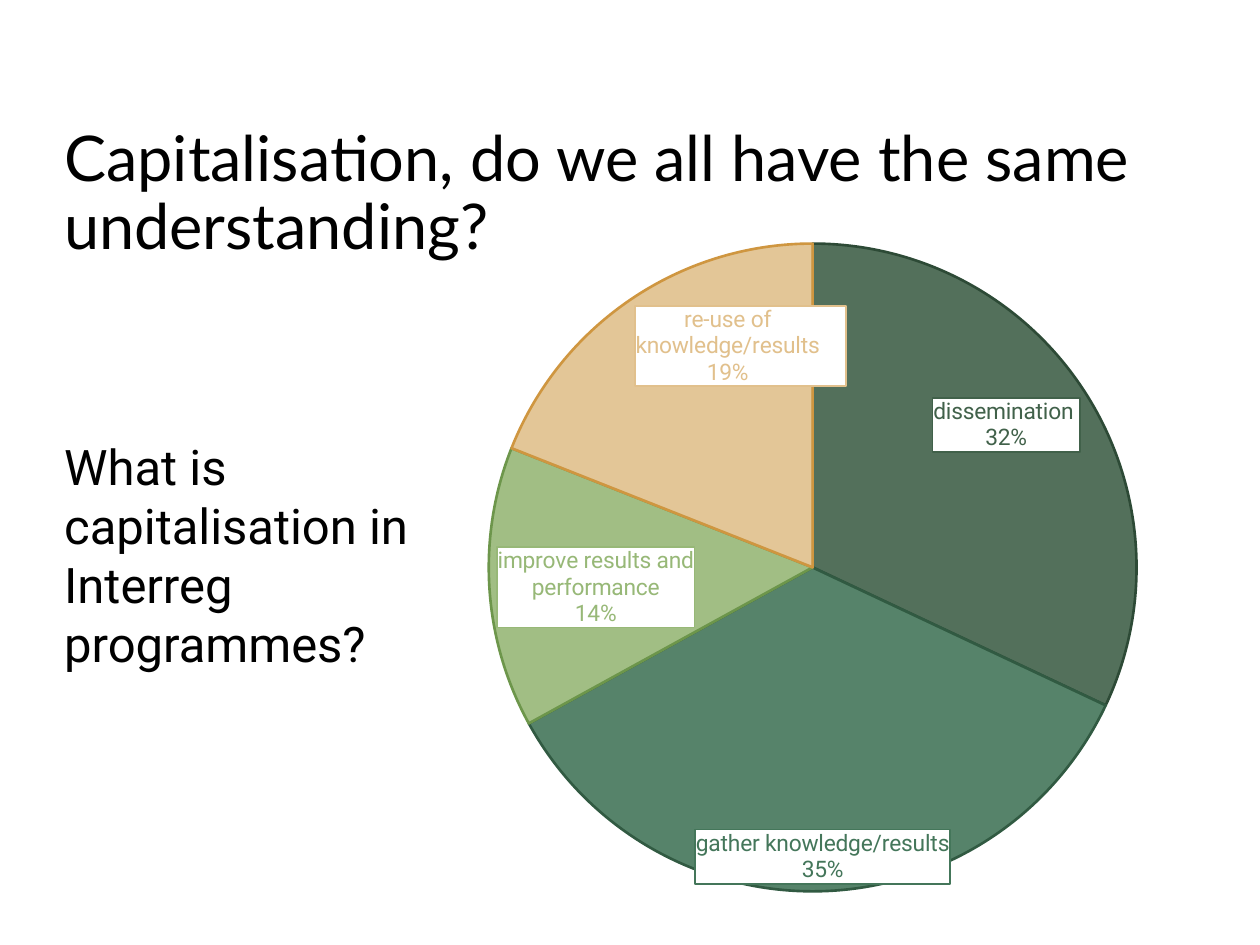
from lxml import etree
from pptx import Presentation
from pptx.chart.data import CategoryChartData
from pptx.dml.color import RGBColor
from pptx.enum.chart import XL_CHART_TYPE, XL_LABEL_POSITION
from pptx.enum.text import MSO_ANCHOR
from pptx.oxml import parse_xml
from pptx.oxml.ns import nsdecls, qn
from pptx.util import Pt

PIE = XL_CHART_TYPE.PIE
INSIDE_END = XL_LABEL_POSITION.INSIDE_END
TOP, MIDDLE = MSO_ANCHOR.TOP, MSO_ANCHOR.MIDDLE

HEADING = "Capitalisation, do we all have the same understanding?"
QUESTION = "What is capitalisation in Interreg programmes?"
ANSWERS = [
    ("dissemination ", 32, "41614A", "2D4A36"),
    ("gather knowledge/results", 35, "44765A", "315A42"),
    ("improve results and performance", 14, "97B877", "6D964B"),
    ("re-use of knowledge/results", 19, "E1C08C", "CF9640"),
]

THEME = {
    "text": "000000", "label_fill": "FFFFFF", "slice_opacity": 90,
    "heading_font": "Lato", "body_font": "Roboto",
    "heading_size": 36, "question_size": 28, "chart_size": 10, "label_size": 13,
    "slice_line": 1.5, "label_line": 1,
}
SLIDE_SIZE = (720, 540)
HEADING_AREA = (36.72, 72.72, 646.56, 116.64)
QUESTION_AREA = (36.72, 240.48, 213.84, 152.64)
CHART_AREA = (162, 119.52, 623.52, 393.84)
PLOT_AREA = {"x": 0, "y": 0.05, "w": 0.97, "h": 0.94}


def add_text(slide, text, *, area, font, size, anchor=TOP, spacing=1.0):
    box = slide.shapes.add_textbox(*map(Pt, area))
    frame = box.text_frame
    frame.word_wrap = True
    frame.vertical_anchor = anchor
    frame.margin_left = frame.margin_right = frame.margin_top = frame.margin_bottom = 0
    para = frame.paragraphs[0]
    para.line_spacing = spacing
    span = para.add_run()
    span.text = text
    set_font(span.font, font, size, THEME["text"])


def set_font(target, name, size, color):
    target.name = name
    target.size = Pt(size)
    target.color.rgb = RGBColor.from_string(color)


def set_plot_layout(chart):
    places = "".join(f'<c:{key} val="{value}"/>' for key, value in PLOT_AREA.items())
    layout = parse_xml(
        f'<c:layout {nsdecls("c")}><c:manualLayout><c:layoutTarget val="inner"/>'
        f'<c:xMode val="edge"/><c:yMode val="edge"/>{places}</c:manualLayout></c:layout>'
    )
    plot_area = chart.element.find(".//" + qn("c:plotArea"))
    old_layout = plot_area.find(qn("c:layout"))
    if old_layout is not None:
        plot_area.remove(old_layout)
    plot_area.insert(0, layout)


def style_slice(point, fill, line):
    point.format.fill.solid()
    point.format.fill.fore_color.rgb = RGBColor.from_string(fill)
    point.format.line.color.rgb = RGBColor.from_string(line)
    point.format.line.width = Pt(THEME["slice_line"])
    set_font(point.data_label.font, THEME["body_font"], THEME["label_size"], fill)
    point.data_label.position = INSIDE_END


def style_label(label, color):
    frame = parse_xml(
        f'<c:spPr {nsdecls("c", "a")}>'
        f'<a:solidFill><a:srgbClr val="{THEME["label_fill"]}"/></a:solidFill>'
        f'<a:ln w="{Pt(THEME["label_line"])}"><a:solidFill><a:srgbClr val="{color}"/>'
        f'</a:solidFill></a:ln></c:spPr>'
    )
    label.find(qn("c:txPr")).addprevious(frame)
    for name, shown in (("showVal", "0"), ("showCatName", "1"), ("showPercent", "1")):
        label.find(qn("c:" + name)).set("val", shown)
    separator = etree.Element(qn("c:separator"))
    separator.text = "\n"
    label.find(qn("c:showBubbleSize")).addnext(separator)


def add_pie(slide):
    names, values, fills, lines = zip(*ANSWERS)
    data = CategoryChartData()
    data.categories = names
    data.add_series("Series 1", values)
    chart = slide.shapes.add_chart(PIE, *map(Pt, CHART_AREA), data).chart
    chart.has_title = False
    chart.has_legend = False
    set_font(chart.font, THEME["body_font"], THEME["chart_size"], THEME["text"])
    set_plot_layout(chart)

    plot = chart.plots[0]
    plot.vary_by_categories = True
    for index, (fill, line) in enumerate(zip(fills, lines)):
        style_slice(plot.series[0].points[index], fill, line)
    for label, fill in zip(chart.element.iter(qn("c:dLbl")), fills):
        style_label(label, fill)
    for slice_part in chart.element.iter(qn("c:dPt")):
        color = slice_part.find(f'{qn("c:spPr")}/{qn("a:solidFill")}/{qn("a:srgbClr")}')
        alpha = etree.SubElement(color, qn("a:alpha"))
        alpha.set("val", str(THEME["slice_opacity"] * 1000))


def main():
    deck = Presentation()
    deck.slide_width, deck.slide_height = map(Pt, SLIDE_SIZE)
    page = deck.slides.add_slide(deck.slide_layouts[6])
    add_text(page, QUESTION, area=QUESTION_AREA, font=THEME["body_font"],
             size=THEME["question_size"], anchor=MIDDLE)
    add_pie(page)
    add_text(page, HEADING, area=HEADING_AREA, font=THEME["heading_font"],
             size=THEME["heading_size"], spacing=0.9)
    deck.save("out.pptx")


if __name__ == "__main__":
    main()
